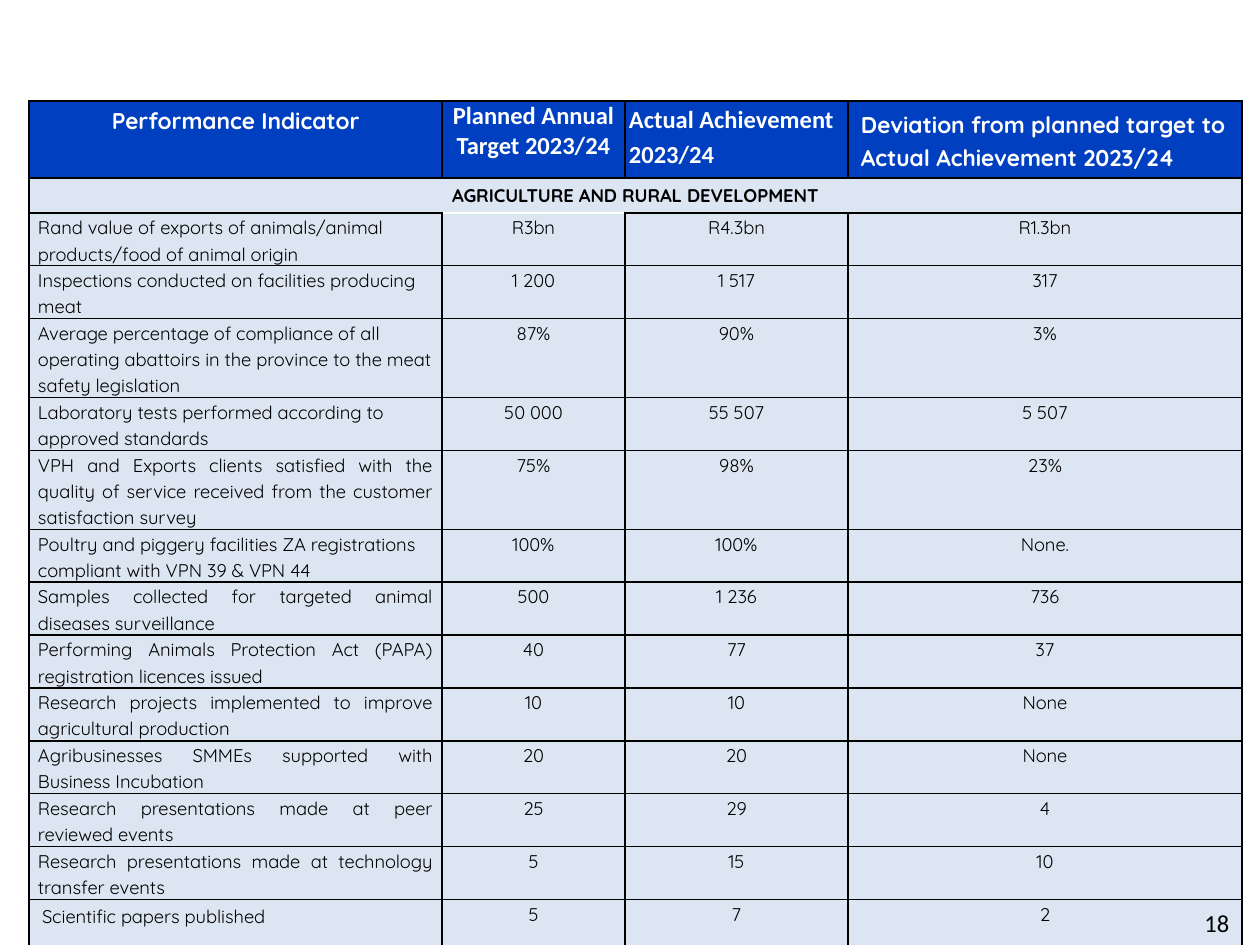
from dataclasses import dataclass

from lxml.etree import SubElement
from pptx import Presentation
from pptx.dml.color import RGBColor
from pptx.enum.text import PP_ALIGN
from pptx.oxml.ns import qn
from pptx.util import Emu, Pt

HUES = {"head": "0040C0", "body": "DCE6F2", "ink": "000000", "white": "FFFFFF"}
LEFT, MID, JUST = PP_ALIGN.LEFT, PP_ALIGN.CENTER, PP_ALIGN.JUSTIFY
WIDE, SLIM, TIGHT = (13, 6), (9, 0), (4, 0)
COLS = [413, 183, 223, 394]


def px(count: int) -> Emu:
    """Turn pixels, 126 to the inch, into EMU."""
    return Emu(round(count * 914400 / 126))


@dataclass
class Head:
    text: str
    font: str
    size: int
    pad: tuple[int, int]
    align: PP_ALIGN = MID
    line: float | None = None
    after: int = 0


@dataclass
class Row:
    name: str
    plan: str
    done: str
    gap: str
    align: PP_ALIGN = JUST
    high: int = 53


HEADS = [
    Head("Performance Indicator", "Quicksand", 13, WIDE),
    Head("Planned Annual Target 2023/24", "Calibri", 14, TIGHT),
    Head("Actual Achievement 2023/24", "Calibri", 14, TIGHT, LEFT, 1.15, 8),
    Head("Deviation from planned target to Actual Achievement 2023/24",
         "Quicksand", 13, WIDE, LEFT, 1.15, 8),
]
ROWS = [
    Row("Rand value of exports of animals/animal products/food of animal origin",
        "R3bn", "R4.3bn", "R1.3bn", LEFT, 49),
    Row("Inspections conducted on facilities producing meat",
        "1 200", "1 517", "317", LEFT),
    Row("Average percentage of compliance of all operating abattoirs in the "
        "province to the meat safety legislation", "87%", "90%", "3%", LEFT),
    Row("Laboratory tests performed according to approved standards",
        "50 000", "55 507", "5 507", LEFT),
    Row("VPH and Exports clients satisfied with the quality of service received "
        "from the customer satisfaction survey", "75%", "98%", "23%"),
    Row("Poultry and piggery facilities ZA registrations compliant with "
        "VPN 39 & VPN 44", "100%", "100%", "None.", LEFT, 49),
    Row("Samples collected for targeted animal diseases surveillance",
        "500", "1 236", "736"),
    Row("Performing Animals Protection Act (PAPA) registration licences issued",
        "40", "77", "37", high=48),
    Row("Research projects implemented to improve agricultural production",
        "10", "10", "None"),
    Row("Agribusinesses SMMEs supported with Business Incubation",
        "20", "20", "None"),
    Row("Research presentations made at peer reviewed events", "25", "29", "4"),
    Row("Research presentations made at technology transfer events",
        "5", "15", "10"),
    Row("Scientific papers published", "5", "7", "2", LEFT),
]


def write(frame, text: str, *, font="Quicksand", size=10.5, hue="ink",
          bold=False, align=LEFT, line=None, after=0) -> None:
    para = frame.paragraphs[0]
    para.alignment = align
    para.line_spacing = line
    para.space_after = Pt(after)
    run = para.add_run()
    run.text = text
    run.font.name = font
    run.font.size = Pt(size)
    run.font.bold = bold
    run.font.color.rgb = RGBColor.from_string(HUES[hue])


def edge(cell, top: str = "ink") -> None:
    """Rule all four sides of a cell at one point."""
    props = cell._tc.get_or_add_tcPr()
    for side in "LRTB":
        rule = SubElement(props, qn(f"a:ln{side}"), w=str(Pt(1)))
        fill = SubElement(rule, qn("a:solidFill"))
        hue = top if side == "T" else "ink"
        SubElement(fill, qn("a:srgbClr"), val=HUES[hue])


def dress(cell, hue: str, pad: tuple[int, int], top: str = "ink") -> None:
    """Give a cell its borders, fill and margins."""
    edge(cell, top)
    cell.fill.solid()
    cell.fill.fore_color.rgb = RGBColor.from_string(HUES[hue])
    cell.margin_left = cell.margin_right = px(pad[0])
    cell.margin_top = cell.margin_bottom = px(pad[1])


def draw_heads(grid) -> None:
    for col, head in enumerate(HEADS):
        cell = grid.cell(0, col)
        dress(cell, "head", head.pad)
        write(cell.text_frame, head.text, font=head.font, size=head.size,
              hue="white", bold=True, align=head.align, line=head.line,
              after=head.after)


def draw_band(grid) -> None:
    for col in range(len(COLS)):
        dress(grid.cell(1, col), "body", WIDE)
    band = grid.cell(1, 0)
    band.merge(grid.cell(1, len(COLS) - 1))
    write(band.text_frame, "AGRICULTURE AND RURAL DEVELOPMENT",
          bold=True, align=MID)


def draw_row(grid, spot: int, row: Row) -> None:
    last = row is ROWS[-1]
    for col, text in enumerate([row.name, row.plan, row.done, row.gap]):
        cell = grid.cell(spot, col)
        loose = last and col == 0
        pale = row is ROWS[0] and col == 1
        dress(cell, "body", WIDE if loose else SLIM, "white" if pale else "ink")
        write(cell.text_frame, text, align=MID if col else row.align,
              line=None if loose else 1.15, after=0 if loose else 3)


def main() -> None:
    deck = Presentation()
    deck.slide_width, deck.slide_height = px(1260), px(945)
    slide = deck.slides.add_slide(deck.slide_layouts[6])

    highs = [72, 35] + [row.high for row in ROWS]
    grid = slide.shapes.add_table(len(highs), len(COLS), px(29), px(101),
                                  px(sum(COLS)), px(sum(highs))).table
    for part, wide in zip(grid.columns, COLS):
        part.width = px(wide)
    for part, high in zip(grid.rows, highs):
        part.height = px(high)
    draw_heads(grid)
    draw_band(grid)
    for spot, row in enumerate(ROWS, start=2):
        draw_row(grid, spot, row)

    page = slide.shapes.add_textbox(px(1192), px(902), px(63), px(50))
    page.text_frame.word_wrap = True
    write(page.text_frame, "18", font="Calibri", size=14)
    deck.save("out.pptx")


if __name__ == "__main__":
    main()
